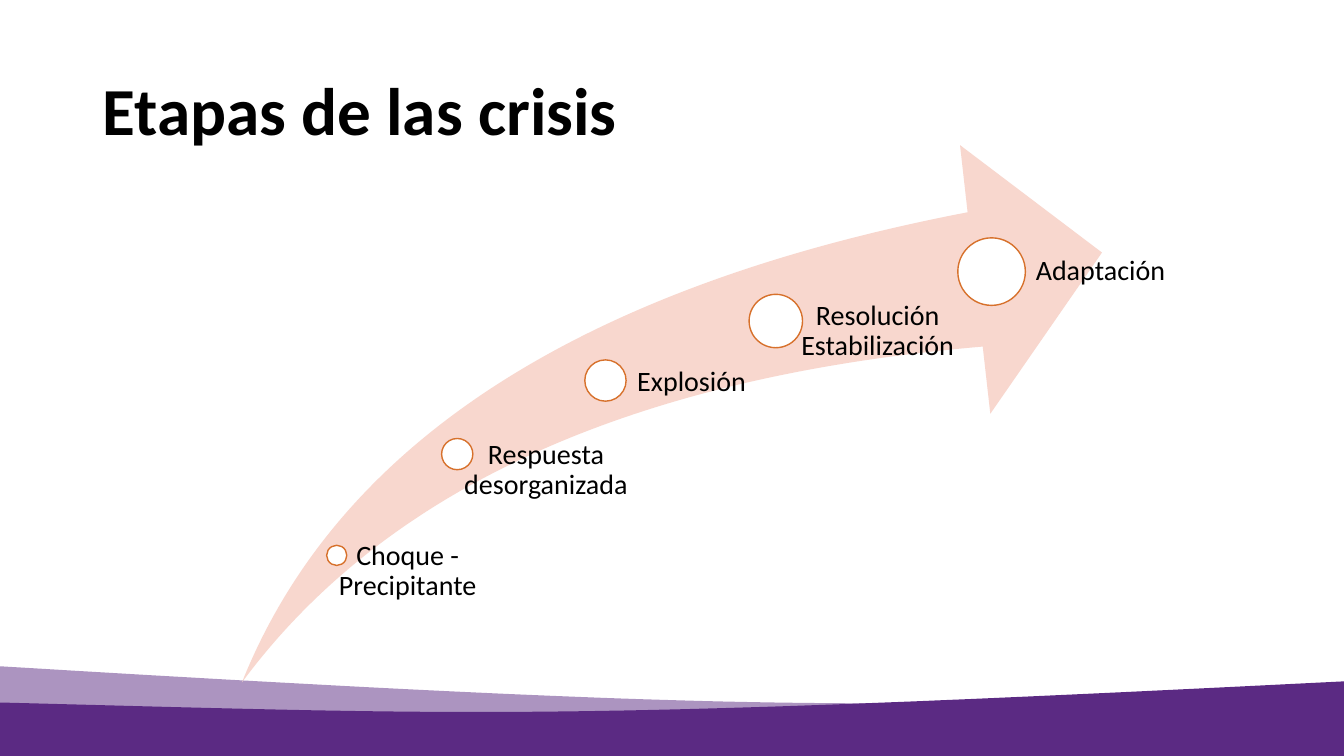
from lxml import etree
from pptx import Presentation
from pptx.dml.color import RGBColor
from pptx.enum.shapes import MSO_SHAPE as Preset
from pptx.enum.text import MSO_ANCHOR as Anchor, MSO_AUTO_SIZE as AutoSize, PP_ALIGN as Align
from pptx.oxml.ns import qn
from pptx.util import Inches, Pt

PURPLE, PEACH, ORANGE, WHITE, BLACK = "5B2A83", "F8D7CE", "D7712C", "FFFFFF", "000000"
CURVE_STEPS = 60

WAVES = [
    ([(13.33, 0.26), (8.64, 0.4), (7.94, 0.48), (0, 0)], 50),
    ([(0, 0.36), (4.7, 0.48), (5.4, 0.55), (13.33, 0.15)], 100),
]

STAGES = [
    ("Choque - Precipitante", (0.84, 3.97, 0.2), (0.38, 3.93, 2.43, 1.27), 0.1, Align.CENTER),
    ("Respuesta desorganizada", (1.98, 2.91, 0.31), (1.85, 2.93, 2.17, 2.23), 0.16, Align.CENTER),
    ("Explosión", (3.4, 2.13, 0.41), (3.7, 2.2, 1.65, 3), 0.22, Align.LEFT),
    ("Resolución Estabilización", (5.03, 1.48, 0.53), (5.02, 1.55, 2.29, 3.57), 0.28, Align.CENTER),
    ("Adaptación", (7.1, 0.92, 0.67), (7.48, 1.1, 1.71, 3.92), 0.36, Align.CENTER),
]


def color(hex_code):
    return RGBColor.from_string(hex_code)


def set_values(target, values):
    for key, value in values.items():
        setattr(target, key, value)


def paint(shape, fill, outline=None):
    shape.shadow.inherit = False
    shape.fill.solid()
    shape.fill.fore_color.rgb = color(fill)
    if outline:
        shape.line.color.rgb = color(outline)
        shape.line.width = Pt(1)
    else:
        shape.line.fill.background()


def write(frame, text, size, bold, frame_format, align):
    set_values(frame, {"word_wrap": True, "auto_size": AutoSize.NONE, **frame_format})
    frame.text = text
    paragraph = frame.paragraphs[0]
    set_values(paragraph, {"alignment": align, "line_spacing": 0.9})
    set_values(paragraph.font, {"name": "Calibri", "size": Pt(size), "bold": bold})
    paragraph.font.color.rgb = color(BLACK)


def bezier(controls, t):
    weights = ((1 - t) ** 3, 3 * t * (1 - t) ** 2, 3 * t ** 2 * (1 - t), t ** 3)
    return tuple(sum(w * point[axis] for w, point in zip(weights, controls)) for axis in (0, 1))


def add_waves(slide, left, top, width, height):
    for controls, opacity in WAVES:
        crest = [bezier(controls, step / CURVE_STEPS) for step in range(CURVE_STEPS + 1)]
        outline = crest + [(crest[-1][0], height), (crest[0][0], height)]
        points = [(Inches(left + x), Inches(top + y)) for x, y in outline]
        builder = slide.shapes.build_freeform(*points[0])
        builder.add_line_segments(points[1:], close=True)
        wave = builder.convert_to_shape()
        paint(wave, PURPLE)
        if opacity < 100:
            solid = wave.fill._xPr.find(qn("a:solidFill"))
            etree.SubElement(solid[0], qn("a:alpha"), val=str(opacity * 1000))


def add_title(slide, left, top, width, height):
    title = slide.shapes.title
    set_values(title, {"left": Inches(left), "top": Inches(top),
                       "width": Inches(width), "height": Inches(height)})
    write(title.text_frame, "Etapas de las crisis", 48, True,
          {"vertical_anchor": Anchor.MIDDLE}, Align.LEFT)


def add_stages(slide, left, top, width, height):
    diagram = slide.shapes.add_group_shape().shapes
    arrow = diagram.add_shape(Preset.SWOOSH_ARROW, *map(Inches, (left, top, width, height)))
    arrow.adjustments[0] = arrow.adjustments[1] = 0.25
    paint(arrow, PEACH)
    for name, (dot_x, dot_y, size), (x, y, label_width, label_height), inset, align in STAGES:
        dot = diagram.add_shape(
            Preset.OVAL, *map(Inches, (left + dot_x, top + dot_y, size, size)))
        paint(dot, WHITE, ORANGE)
        label = diagram.add_textbox(
            *map(Inches, (left + x, top + y, label_width, label_height)))
        insets = {"margin_left": Inches(inset), "margin_top": 0,
                  "margin_right": 0, "margin_bottom": 0}
        write(label.text_frame, name, 20, False, insets, align)


def main():
    deck = Presentation()
    deck.slide_width, deck.slide_height = Inches(13.33), Inches(7.5)
    slide = deck.slides.add_slide(deck.slide_layouts.get_by_name("Title Only"))
    add_waves(slide, 0, 6.61, 13.33, 0.89)
    add_title(slide, 0.92, 0.4, 11.5, 1.45)
    add_stages(slide, 2.4, 1.44, 8.53, 5.33)
    deck.save("out.pptx")


if __name__ == "__main__":
    main()
